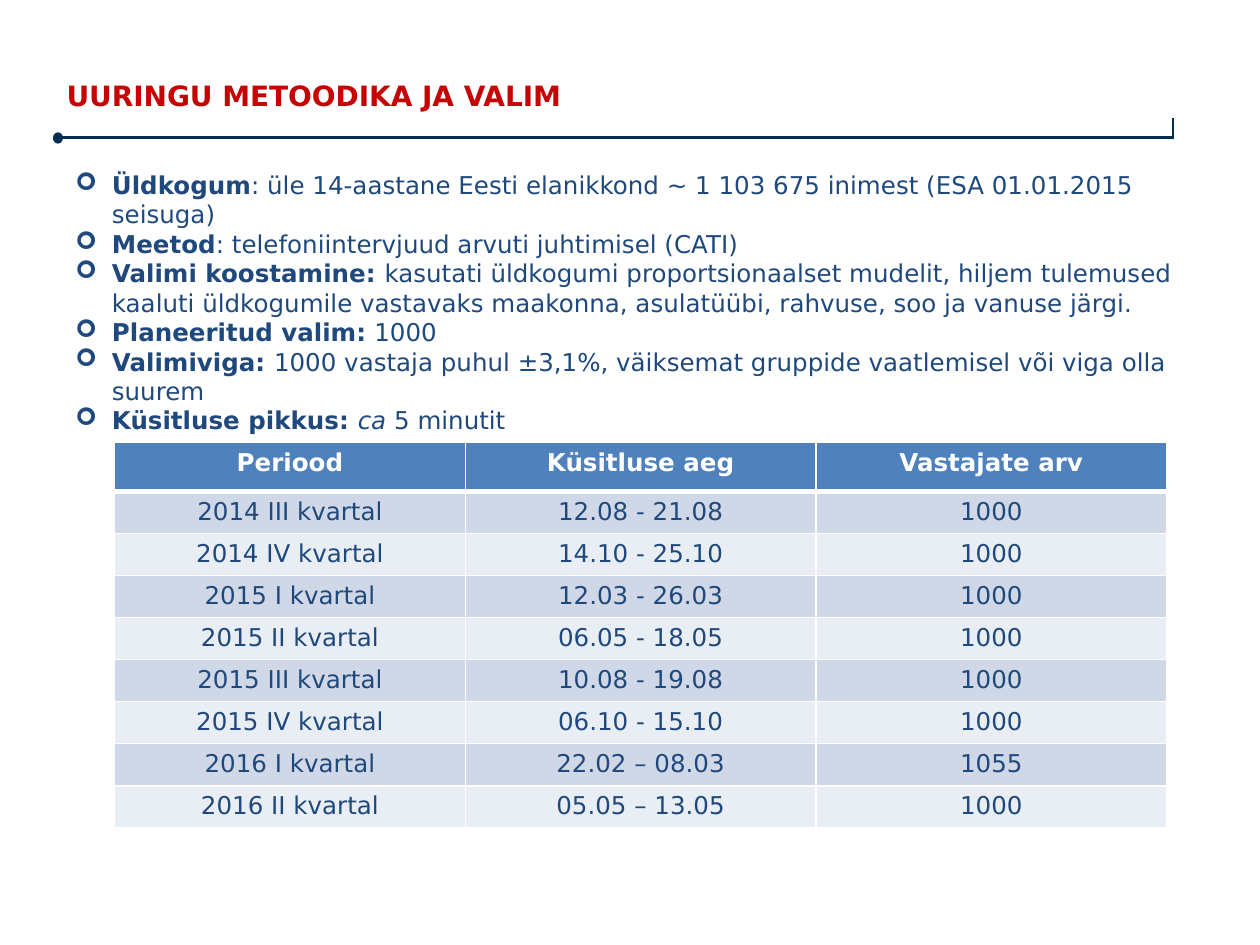
from dataclasses import dataclass

from lxml.etree import SubElement
from pptx import Presentation
from pptx.dml.color import RGBColor
from pptx.enum.shapes import MSO_CONNECTOR as Connector
from pptx.enum.shapes import MSO_SHAPE as Shape
from pptx.enum.text import MSO_ANCHOR as Anchor
from pptx.enum.text import PP_ALIGN as Align
from pptx.oxml.ns import qn
from pptx.slide import Slide
from pptx.table import _Cell as Cell
from pptx.text.text import TextFrame, _Paragraph as Paragraph
from pptx.util import Inches, Pt

FONT = "DejaVu Sans"
NAVY = RGBColor(0x00, 0x2D, 0x52)
RED = RGBColor(0xC5, 0x05, 0x05)
BLUE = RGBColor(0x1F, 0x49, 0x7D)
WHITE = RGBColor(0xFF, 0xFF, 0xFF)
HEADER_FILL = RGBColor(0x4F, 0x81, 0xBD)
BAND_FILLS = (RGBColor(0xD0, 0xD8, 0xE8), RGBColor(0xE9, 0xED, 0xF4))


@dataclass(frozen=True)
class Span:
    text: str
    bold: bool = False
    italic: bool = False


@dataclass(frozen=True)
class Survey:
    period: str
    dates: str
    respondents: str


FACTS = (
    (Span("Üldkogum", bold=True),
     Span(": üle 14-aastane Eesti elanikkond ~ 1 103 675 inimest (ESA 01.01.2015 seisuga)")),
    (Span("Meetod", bold=True), Span(": telefoniintervjuud arvuti juhtimisel (CATI)")),
    (Span("Valimi koostamine: ", bold=True),
     Span("kasutati üldkogumi proportsionaalset mudelit, hiljem tulemused kaaluti "
          "üldkogumile vastavaks maakonna, asulatüübi, rahvuse, soo ja vanuse järgi.")),
    (Span("Planeeritud valim:", bold=True), Span(" 1000")),
    (Span("Valimiviga: ", bold=True),
     Span("1000 vastaja puhul ±3,1%, väiksemat gruppide vaatlemisel või viga olla suurem")),
    (Span("Küsitluse pikkus: ", bold=True), Span("ca", italic=True), Span(" 5 minutit")),
)

HEADINGS = ("Periood", "Küsitluse aeg", "Vastajate arv")
SURVEYS = (
    Survey("2014 III kvartal", "12.08 - 21.08", "1000"),
    Survey("2014 IV kvartal", "14.10 - 25.10", "1000"),
    Survey("2015 I kvartal", "12.03 - 26.03", "1000"),
    Survey("2015 II kvartal", "06.05 - 18.05", "1000"),
    Survey("2015 III kvartal", "10.08 - 19.08", "1000"),
    Survey("2015 IV kvartal", "06.10 - 15.10", "1000"),
    Survey("2016 I kvartal", "22.02 – 08.03", "1055"),
    Survey("2016 II kvartal", "05.05 – 13.05", "1000"),
)


def add_span(para: Paragraph, span: Span, size: float, color: RGBColor) -> None:
    run = para.add_run()
    run.text = span.text
    font = run.font
    font.name, font.size = FONT, Pt(size)
    font.bold, font.italic = span.bold, span.italic
    font.color.rgb = color


def add_text_box(page: Slide, left: float, top: float, width: float, height: float) -> TextFrame:
    box = page.shapes.add_textbox(Inches(left), Inches(top), Inches(width), Inches(height))
    box.text_frame.word_wrap = True
    return box.text_frame


def add_rule(page: Slide, x1: float, y1: float, x2: float, y2: float) -> None:
    rule = page.shapes.add_connector(
        Connector.STRAIGHT, Inches(x1), Inches(y1), Inches(x2), Inches(y2))
    rule.line.color.rgb = NAVY
    rule.line.width = Pt(1.5)
    SubElement(rule._element.spPr, qn("a:effectLst"))


def add_title(page: Slide) -> None:
    frame = add_text_box(page, 0.43, 0.44, 8.4, 0.63)
    frame.vertical_anchor = Anchor.MIDDLE
    add_span(frame.paragraphs[0], Span("UURINGU METOODIKA JA VALIM", bold=True), 16, RED)


def add_title_rule(page: Slide) -> None:
    add_rule(page, 9.31, 0.94, 9.31, 1.1)
    add_rule(page, 0.47, 1.09, 9.31, 1.09)
    dot = page.shapes.add_shape(
        Shape.OVAL, Inches(0.42), Inches(1.05), Inches(0.08), Inches(0.09))
    dot.shadow.inherit = False
    dot.fill.solid()
    dot.fill.fore_color.rgb = NAVY
    dot.line.fill.background()


def set_bullet(para: Paragraph) -> None:
    indent = Inches(0.29)
    properties = para._p.get_or_add_pPr()
    properties.set("marL", str(indent))
    properties.set("indent", str(-indent))
    SubElement(properties, qn("a:buFont"), typeface="Wingdings")
    SubElement(properties, qn("a:buChar"), char="➢")


def add_facts(page: Slide) -> None:
    frame = add_text_box(page, 0.5, 1.3, 9.07, 5.32)
    for index, spans in enumerate(FACTS):
        para = frame.add_paragraph() if index else frame.paragraphs[0]
        set_bullet(para)
        for span in spans:
            add_span(para, span, 14, BLUE)


def set_borders(cell: Cell, bottom: float) -> None:
    properties = cell._tc.get_or_add_tcPr()
    for side, width in (("L", 1), ("R", 1), ("T", 1), ("B", bottom)):
        border = SubElement(properties, qn(f"a:ln{side}"), w=str(Pt(width)))
        fill = SubElement(border, qn("a:solidFill"))
        SubElement(fill, qn("a:srgbClr"), val=str(WHITE))


def fill_cell(cell: Cell, span: Span, color: RGBColor, fill: RGBColor, bottom: float) -> None:
    set_borders(cell, bottom)
    cell.fill.solid()
    cell.fill.fore_color.rgb = fill
    para = cell.text_frame.paragraphs[0]
    para.alignment = Align.CENTER
    add_span(para, span, 14, color)


def add_survey_table(page: Slide) -> None:
    table = page.shapes.add_table(
        len(SURVEYS) + 1, len(HEADINGS),
        Inches(0.91), Inches(3.51), Inches(8.35), Inches(2.79)).table
    for row in table.rows:
        row.height = Inches(0.3)
    table.rows[0].height = Inches(0.39)
    for column, heading in enumerate(HEADINGS):
        fill_cell(table.cell(0, column), Span(heading, bold=True), WHITE, HEADER_FILL, 3)
    for index, survey in enumerate(SURVEYS):
        values = (survey.period, survey.dates, survey.respondents)
        for column, value in enumerate(values):
            fill_cell(table.cell(index + 1, column), Span(value), BLUE, BAND_FILLS[index % 2], 1)


def main() -> None:
    deck = Presentation()
    deck.slide_width, deck.slide_height = Inches(10), Inches(7.5)
    page = deck.slides.add_slide(deck.slide_layouts[6])
    add_title_rule(page)
    add_title(page)
    add_facts(page)
    add_survey_table(page)
    deck.save("out.pptx")


if __name__ == "__main__":
    main()
